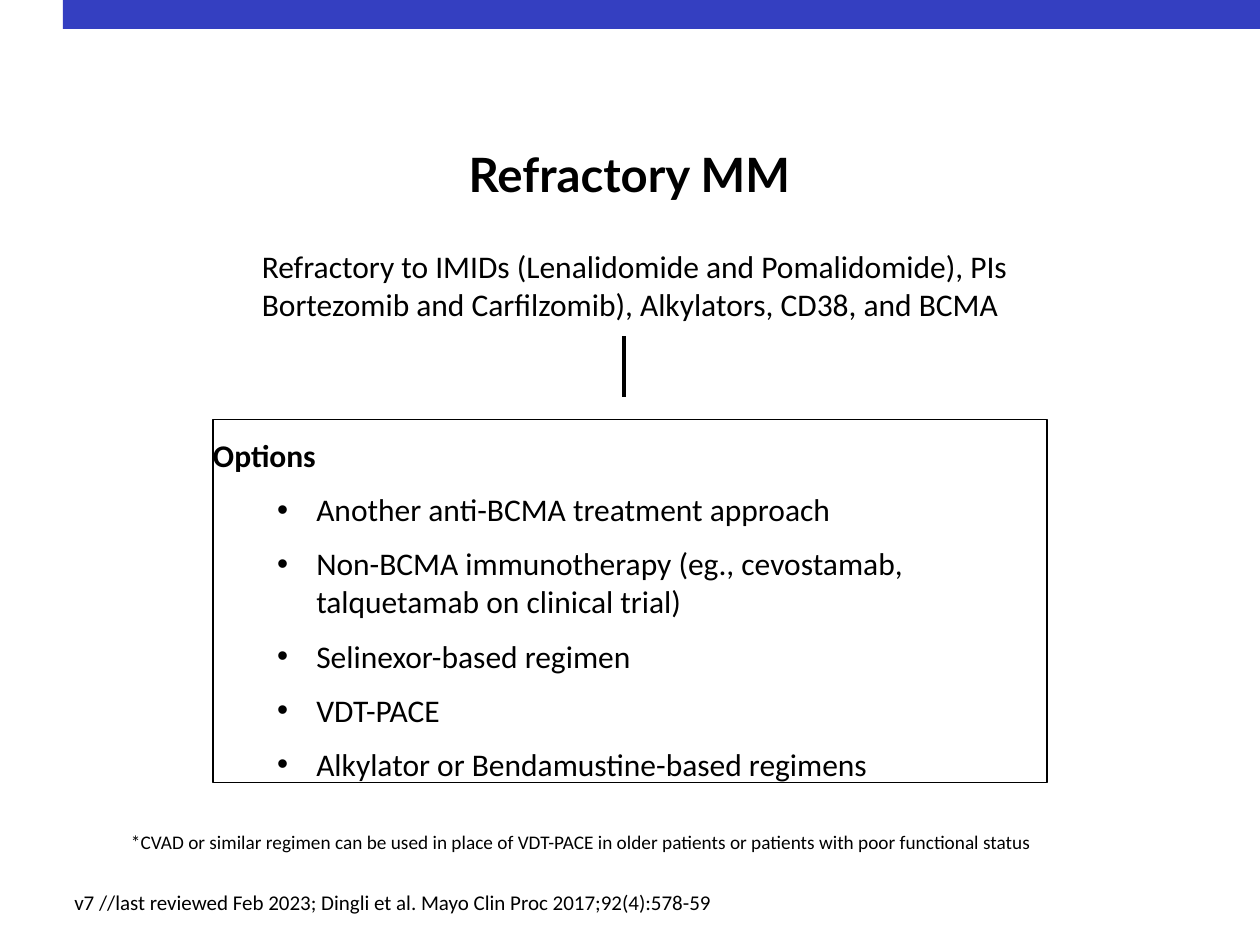
from lxml.etree import SubElement
from pptx import Presentation
from pptx.dml.color import RGBColor
from pptx.enum.shapes import MSO_CONNECTOR, MSO_SHAPE
from pptx.enum.text import MSO_ANCHOR, MSO_AUTO_SIZE, PP_ALIGN
from pptx.oxml.ns import qn
from pptx.util import Inches, Pt

BLACK = RGBColor(0x00, 0x00, 0x00)
BAR_BLUE = RGBColor(0x34, 0x3F, 0xC1)
WIDTH, HEIGHT = 10, 7.5

TITLE = "Refractory MM"
POPULATION = (
    "Refractory to IMIDs (Lenalidomide and Pomalidomide), PIs "
    "Bortezomib and Carfilzomib), Alkylators, CD38, and BCMA"
)
OPTIONS_HEADING = "Options"
OPTIONS = [
    "Another anti-BCMA treatment approach",
    "Non-BCMA immunotherapy (eg., cevostamab, talquetamab on clinical trial)",
    "Selinexor-based regimen",
    "VDT-PACE",
    "Alkylator or Bendamustine-based regimens",
]
FOOTNOTE = (
    "*CVAD or similar regimen can be used in place of VDT-PACE "
    "in older patients or patients with poor functional status"
)
SOURCE = "v7 //last reviewed Feb 2023; Dingli et al. Mayo Clin Proc 2017;92(4):578-59"

OPTIONS_WIDTH = 6.62
OPTIONS_LEFT = (WIDTH - OPTIONS_WIDTH) / 2
OPTIONS_TOP = 3.33
BULLET_INDENT, BULLET_HANG = 0.82, 0.31
LINK_X, LINK_TOP, LINK_LENGTH = 4.95, 2.67, 0.48


def inches(*lengths):
    return [Inches(length) for length in lengths]


def set_frame(frame, margins):
    frame.word_wrap = True
    frame.auto_size = MSO_AUTO_SIZE.NONE
    frame.vertical_anchor = MSO_ANCHOR.TOP
    (frame.margin_left, frame.margin_top,
     frame.margin_right, frame.margin_bottom) = inches(*margins)


def write(paragraph, text, size=18, font="Calibri", bold=False,
          align=PP_ALIGN.LEFT, before=0, line=None, bullet=False):
    if bullet:
        paragraph.level = 1
        properties = paragraph._p.get_or_add_pPr()
        properties.set("marL", str(Inches(BULLET_INDENT)))
        properties.set("indent", str(-Inches(BULLET_HANG)))
        properties.set("marR", str(Inches(0.5)))
        SubElement(properties, qn("a:buFont"), typeface="Arial")
        SubElement(properties, qn("a:buChar"), char="•")
    paragraph.alignment = align
    paragraph.space_before = Pt(before)
    if line:
        paragraph.line_spacing = Pt(line)
    run = paragraph.add_run()
    run.text = text
    run.font.name = font
    run.font.size = Pt(size)
    run.font.bold = bold
    run.font.color.rgb = BLACK


def add_text(slide, text, place, margins=(0, 0, 0, 0), **style):
    frame = slide.shapes.add_textbox(*inches(*place)).text_frame
    set_frame(frame, margins)
    write(frame.paragraphs[0], text, **style)


def add_rectangle(slide, place):
    rectangle = slide.shapes.add_shape(MSO_SHAPE.RECTANGLE, *inches(*place))
    rectangle.shadow.inherit = False
    return rectangle


def main():
    deck = Presentation()
    deck.slide_width, deck.slide_height = inches(WIDTH, HEIGHT)
    slide = deck.slides.add_slide(deck.slide_layouts[5])

    bar = add_rectangle(slide, (WIDTH * 0.05, 0, WIDTH * 0.95, 0.23))
    bar.fill.solid()
    bar.fill.fore_color.rgb = BAR_BLUE
    bar.line.fill.background()

    title = slide.shapes.title
    title.left, title.top, title.width, title.height = inches(2.16, 1.14, 5.67, 0.48)
    set_frame(title.text_frame, (0, 0.07, 0, 0))
    write(title.text_frame.paragraphs[0], TITLE, size=27, font="Lato", bold=True,
          align=PP_ALIGN.CENTER, line=28.5)

    options_box = add_rectangle(slide, (OPTIONS_LEFT, OPTIONS_TOP, OPTIONS_WIDTH, 2.88))
    options_box.fill.background()
    options_box.line.color.rgb = BLACK
    options_box.line.width = Pt(0.75)
    options_frame = options_box.text_frame
    set_frame(options_frame, (0, 0.13, 0, 0))
    write(options_frame.paragraphs[0], OPTIONS_HEADING, bold=True)
    for option in OPTIONS:
        write(options_frame.add_paragraph(), option, before=9.4, bullet=True)

    add_text(slide, POPULATION, (1.98, 1.91, 6.3, 1.01), (0.1, 0.05, 0.1, 0.05))
    add_text(slide, FOOTNOTE, (1.03, 6.58, 8.1, 0.2), (0.01, 0.01, 0, 0), size=11)
    add_text(slide, SOURCE, (0.58, 7.09, 5.17, 0.17), (0.01, 0, 0, 0), size=12, line=12.3)

    link = slide.shapes.add_connector(
        MSO_CONNECTOR.STRAIGHT, *inches(LINK_X, LINK_TOP, LINK_X, LINK_TOP + LINK_LENGTH))
    link.line.color.rgb = BLACK
    link.line.width = Pt(2.25)
    SubElement(link._element.spPr, qn("a:effectLst"))

    deck.save("out.pptx")


if __name__ == "__main__":
    main()
